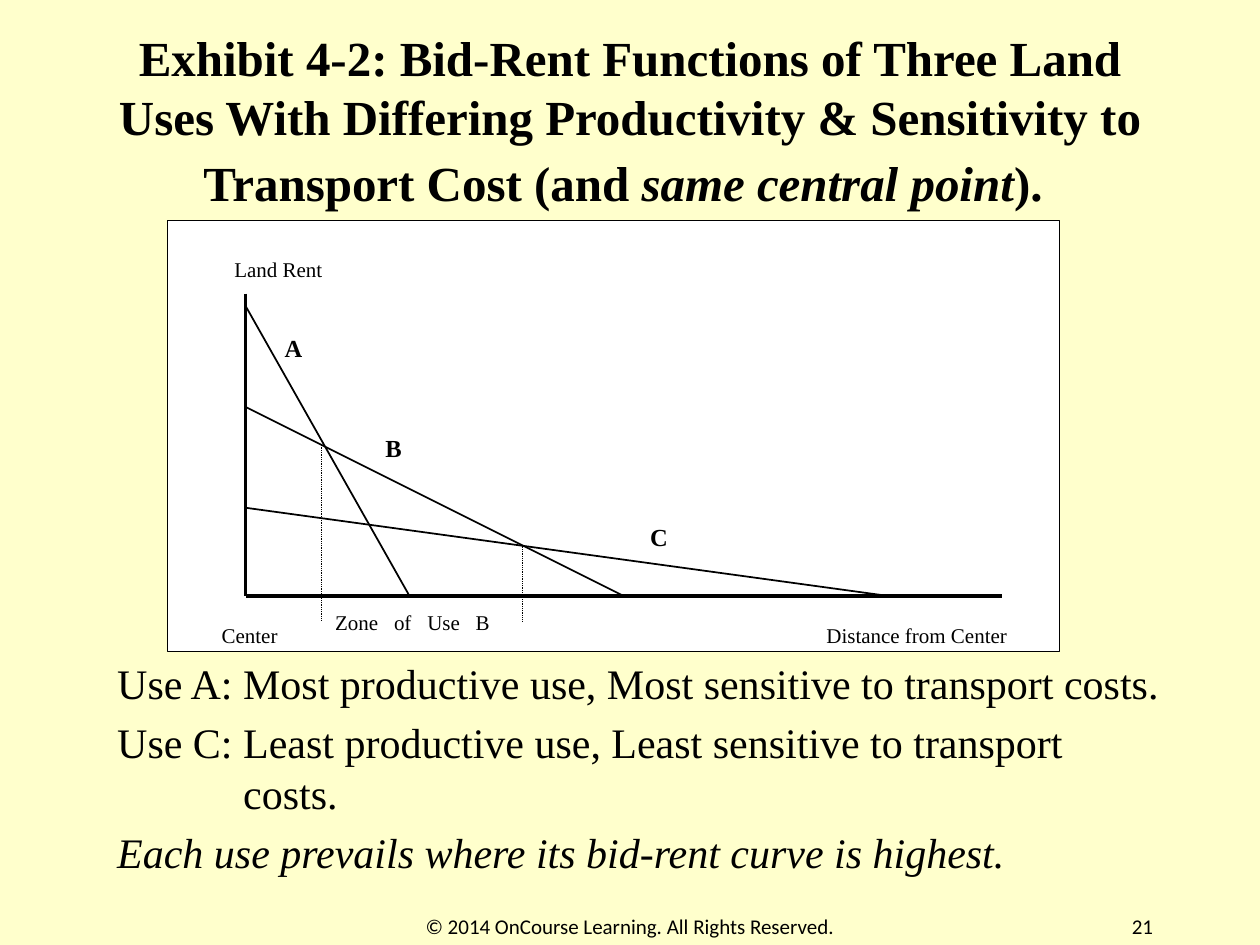
"""Build a slide of bid-rent curves for three land uses."""
from dataclasses import dataclass

from lxml.etree import SubElement
from pptx import Presentation
from pptx.dml.color import RGBColor
from pptx.enum.dml import MSO_LINE
from pptx.enum.shapes import MSO_CONNECTOR, MSO_SHAPE
from pptx.enum.text import MSO_ANCHOR, MSO_AUTO_SIZE, PP_ALIGN
from pptx.oxml.ns import qn
from pptx.util import Inches, Pt

COLORS = {"page": "FFFFCC", "panel": "FFFFFF", "ink": "000000"}
SERIF, SANS = "Times New Roman", "Calibri"
LEFT, BASE, DROP = 1.95, 4.73, 4.93


@dataclass
class Stroke:
    """A straight line from one point to another."""
    start: tuple[float, float]
    end: tuple[float, float]
    width: float = 1
    dotted: bool = False


@dataclass
class Label:
    """A short text in a box, with its words and their gap."""
    words: list[str]
    area: tuple[float, float, float, float]
    size: float = 12
    bold: bool = False
    font: str = SERIF
    inset: tuple[float, float] = (0.01, 0.01)
    align: PP_ALIGN = PP_ALIGN.LEFT
    anchor: MSO_ANCHOR = MSO_ANCHOR.TOP
    gap: float = 0


@dataclass
class Point:
    """A body line with its hanging indent."""
    text: str
    indent: float
    slant: bool = False


STROKES = [
    Stroke((LEFT, 2.33), (LEFT, BASE), 2),
    Stroke((LEFT, BASE), (7.95, BASE), 2),
    Stroke((LEFT, 2.43), (3.25, BASE)),
    Stroke((LEFT, 3.23), (4.95, BASE)),
    Stroke((LEFT, 4.03), (7.05, BASE)),
    Stroke((4.15, 4.33), (4.15, DROP), 0.5, True),
    Stroke((2.55, 3.53), (2.55, DROP), 0.5, True),
]
FOOT = dict(font=SANS, inset=(0.1, 0.05), anchor=MSO_ANCHOR.BOTTOM)
LABELS = [
    Label(["A"], (2.25, 2.63, 0.2, 0.3), 14, True),
    Label(["B"], (3.05, 3.43, 0.2, 0.2), 14, True),
    Label(["C"], (5.15, 4.13, 0.3, 0.2), 14, True),
    Label(["Distance from Center"], (6.55, DROP, 1.8, 0.3)),
    Label(["Center"], (1.75, DROP, 0.8, 0.3)),
    Label(["Zone", "of", "Use", "B"], (2.65, 4.83, 1.4, 0.2), gap=6),
    Label(["Land Rent"], (1.85, 2.03, 0.9, 0.2)),
    Label(["21"], (7.17, 7, 2.08, 0.5), align=PP_ALIGN.RIGHT, **FOOT),
    Label(["© 2014 OnCourse Learning. All Rights Reserved."],
          (3, 7, 4, 0.5), align=PP_ALIGN.CENTER, **FOOT),
]
POINTS = [
    Point("Use A:\tMost productive use, Most sensitive to transport costs.", 1),
    Point("Use C:\tLeast productive use, Least sensitive to transport costs.", 1),
    Point("Each use prevails where its bid-rent curve is highest.", 0.38, True),
]
TITLE = [
    ("Exhibit 4-2: Bid-Rent Functions of Three Land Uses With Differing "
     "Productivity & Sensitivity to Transport Cost (and ", 28, False),
    ("same central point", 28, True),
    (").", 28, False),
    (" ", 32, False),
]


def color(name: str) -> RGBColor:
    """Look up a named colour."""
    return RGBColor.from_string(COLORS[name])


def add_run(para, text: str, size: float, font: str = SERIF,
            bold: bool = False, slant: bool = False):
    """Add one styled run to a paragraph."""
    run = para.add_run()
    run.text = text
    run.font.name, run.font.size = font, Pt(size)
    run.font.bold, run.font.italic = bold, slant
    run.font.color.rgb = color("ink")
    return run


def place(shape, area: tuple[float, float, float, float]) -> None:
    """Move and size a shape."""
    shape.left, shape.top, shape.width, shape.height = map(Inches, area)


def add_panel(slide) -> None:
    """Draw the white panel behind the graph."""
    panel = slide.shapes.add_shape(
        MSO_SHAPE.RECTANGLE, *map(Inches, (1.33, 1.75, 7.08, 3.42)))
    panel.shadow.inherit = False
    panel.fill.solid()
    panel.fill.fore_color.rgb = color("panel")
    panel.line.color.rgb = color("ink")
    panel.line.width = Pt(0.75)


def add_stroke(slide, stroke: Stroke) -> None:
    """Draw one line of the graph."""
    line = slide.shapes.add_connector(
        MSO_CONNECTOR.STRAIGHT, *map(Inches, stroke.start + stroke.end))
    line.line.color.rgb = color("ink")
    line.line.width = Pt(stroke.width)
    if stroke.dotted:
        line.line.dash_style = MSO_LINE.ROUND_DOT
    SubElement(line._element.spPr, qn("a:effectLst"))


def add_label(slide, label: Label) -> None:
    """Write one label, with widened spaces between its words."""
    frame = slide.shapes.add_textbox(*map(Inches, label.area)).text_frame
    frame.word_wrap = True
    frame.vertical_anchor = label.anchor
    side, edge = map(Inches, label.inset)
    frame.margin_left = frame.margin_right = side
    frame.margin_top = frame.margin_bottom = edge
    para = frame.paragraphs[0]
    para.alignment = label.align
    for index, word in enumerate(label.words):
        if index:
            space = add_run(para, " ", label.size, label.font)
            space.font._element.set("spc", str(int(label.gap * 100)))
        add_run(para, word, label.size, label.font, label.bold)


def fill_title(shape) -> None:
    """Write the title."""
    place(shape, (0.75, 0.33, 8.5, 1.25))
    frame = shape.text_frame
    frame.auto_size = MSO_AUTO_SIZE.NONE
    frame.vertical_anchor = MSO_ANCHOR.MIDDLE
    para = frame.paragraphs[0]
    para.alignment = PP_ALIGN.CENTER
    for text, size, slant in TITLE:
        add_run(para, text, size, bold=True, slant=slant)


def fill_body(shape) -> None:
    """Write the points below the graph."""
    place(shape, (0.83, 5.17, 8.5, 2.08))
    frame = shape.text_frame
    frame.auto_size = MSO_AUTO_SIZE.NONE
    for index, point in enumerate(POINTS):
        para = frame.add_paragraph() if index else frame.paragraphs[0]
        props = para._p.get_or_add_pPr()
        props.set("marL", str(Inches(point.indent)))
        props.set("indent", str(-Inches(point.indent)))
        SubElement(props, qn("a:buNone"))
        para.space_before = Pt(5 if index else 0)
        add_run(para, point.text, 24, slant=point.slant)


def main() -> None:
    """Build and save the slide."""
    deck = Presentation()
    deck.slide_width, deck.slide_height = Inches(10), Inches(7.5)
    slide = deck.slides.add_slide(deck.slide_layouts[1])
    slide.background.fill.solid()
    slide.background.fill.fore_color.rgb = color("page")
    fill_title(slide.shapes.title)
    fill_body(slide.placeholders[1])
    add_panel(slide)
    for stroke in STROKES:
        add_stroke(slide, stroke)
    for label in LABELS:
        add_label(slide, label)
    deck.save("out.pptx")


if __name__ == "__main__":
    main()
